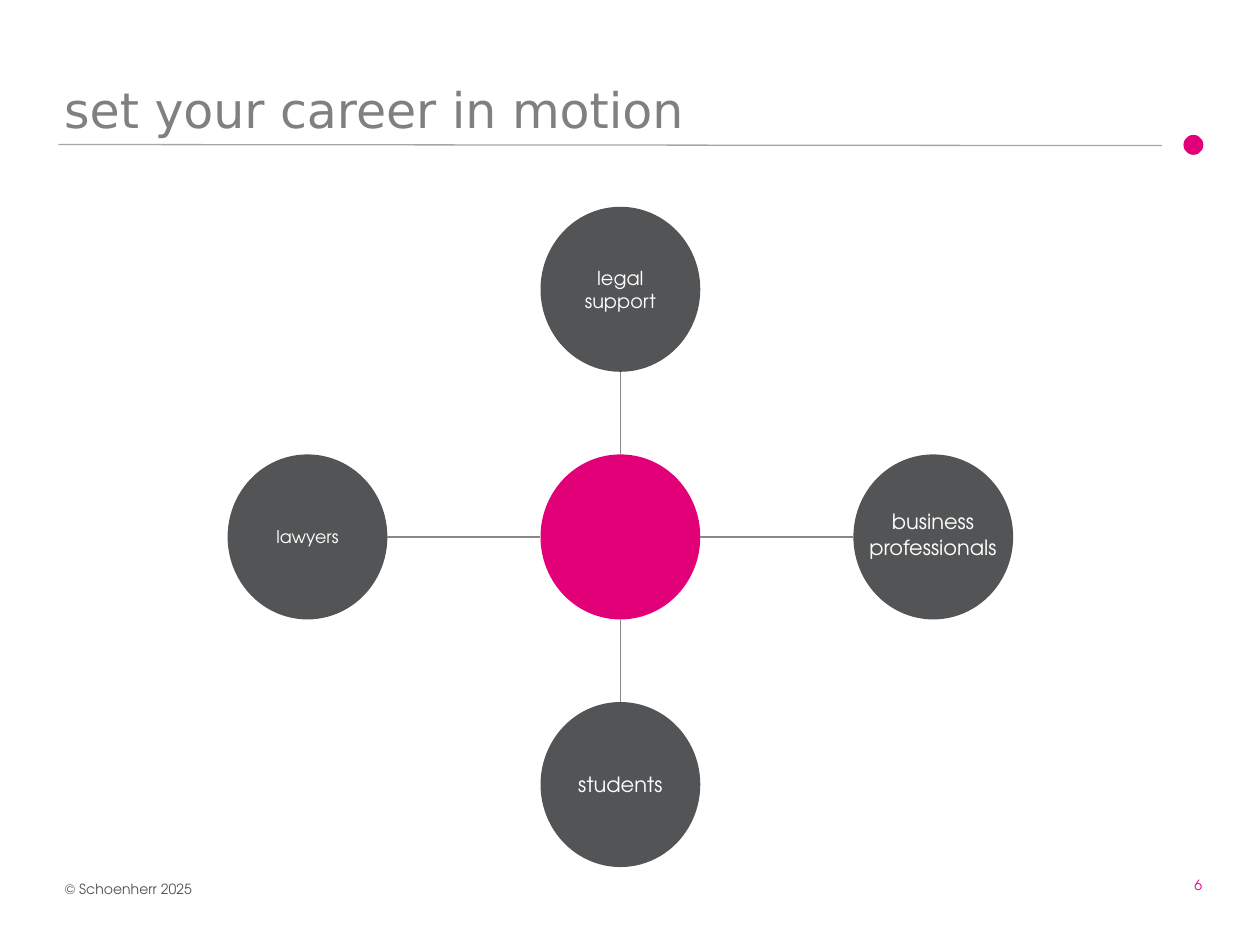
from dataclasses import dataclass

from pptx import Presentation
from pptx.dml.color import RGBColor
from pptx.enum.shapes import MSO_CONNECTOR, MSO_SHAPE
from pptx.enum.text import MSO_ANCHOR as Anchor
from pptx.enum.text import MSO_AUTO_SIZE as AutoSize
from pptx.enum.text import PP_ALIGN as Align
from pptx.oxml import parse_xml
from pptx.oxml.ns import nsdecls
from pptx.util import Pt

COLORS = {
    "accent": "E2007A",
    "hub": "E20078",
    "node": "535455",
    "title": "808080",
    "rule": "A6A6A6",
    "spoke": "878889",
    "white": "FFFFFF",
}
BODY_FONT = "TeX Gyre Adventor"
TITLE_FONT = "DejaVu Sans"

CENTER_X, CENTER_Y = 354.5, 306.8
CIRCLE_WIDTH, CIRCLE_HEIGHT = 91.3, 94.3
STEP_X, STEP_Y = 178.8, 141.5


@dataclass
class Node:
    column: int
    row: int
    text: str = ""
    size: float = 12


NODES = [
    Node(1, 0),
    Node(-1, 0, "lawyers", 10),
    Node(0, 1, "students", 12),
    Node(0, -1, "legal support", 11),
]


def color(name: str) -> RGBColor:
    return RGBColor.from_string(COLORS[name])


def format_text(frame, font: str, size: float, color_name: str, align=Align.LEFT) -> None:
    for paragraph in frame.paragraphs:
        paragraph.alignment = align
        for run in paragraph.runs:
            run.font.name = font
            run.font.size = Pt(size)
            run.font.color.rgb = color(color_name)


def add_ellipse(slide, center_x: float, center_y: float, width: float, height: float, fill: str):
    shape = slide.shapes.add_shape(
        MSO_SHAPE.OVAL, Pt(center_x - width / 2), Pt(center_y - height / 2), Pt(width), Pt(height)
    )
    shape.shadow.inherit = False
    shape.fill.solid()
    shape.fill.fore_color.rgb = color(fill)
    shape.line.fill.background()
    return shape


def add_line(slide, start_x: float, start_y: float, end_x: float, end_y: float, color_name: str) -> None:
    line = slide.shapes.add_connector(
        MSO_CONNECTOR.STRAIGHT, Pt(start_x), Pt(start_y), Pt(end_x), Pt(end_y)
    )
    line.line.color.rgb = color(color_name)
    line.line.width = Pt(0.75)
    line._element.spPr.append(parse_xml(f"<a:effectLst {nsdecls('a')}/>"))


def add_label(slide, left: float, top: float, width: float, height: float, text: str,
              size: float, color_name: str, align=Align.LEFT, wrap: bool = True) -> None:
    box = slide.shapes.add_textbox(Pt(left), Pt(top), Pt(width), Pt(height))
    frame = box.text_frame
    frame.word_wrap = wrap
    frame.auto_size = AutoSize.SHAPE_TO_FIT_TEXT
    frame.text = text
    format_text(frame, BODY_FONT, size, color_name, align)


def add_title(slide, text: str) -> None:
    title = slide.shapes.title
    title.left, title.top, title.width, title.height = Pt(29.5), Pt(43.2), Pt(638), Pt(39.6)
    frame = title.text_frame
    frame.word_wrap = True
    frame.auto_size = AutoSize.NONE
    frame.vertical_anchor = Anchor.BOTTOM
    frame.text = text
    format_text(frame, TITLE_FONT, 28, "title")


def add_node(slide, node: Node) -> None:
    shape = add_ellipse(slide, CENTER_X + node.column * STEP_X, CENTER_Y + node.row * STEP_Y,
                        CIRCLE_WIDTH, CIRCLE_HEIGHT, "node")
    if node.text:
        frame = shape.text_frame
        frame.word_wrap = True
        frame.vertical_anchor = Anchor.MIDDLE
        frame.text = node.text
        format_text(frame, BODY_FONT, node.size, "white", Align.CENTER)


def add_spoke(slide, node: Node) -> None:
    add_line(
        slide,
        CENTER_X + node.column * CIRCLE_WIDTH / 2,
        CENTER_Y + node.row * CIRCLE_HEIGHT / 2,
        CENTER_X + node.column * (STEP_X - CIRCLE_WIDTH / 2),
        CENTER_Y + node.row * (STEP_Y - CIRCLE_HEIGHT / 2),
        "spoke",
    )


def main() -> None:
    presentation = Presentation()
    presentation.slide_width, presentation.slide_height = Pt(720), Pt(540)
    slide = presentation.slides.add_slide(presentation.slide_layouts[5])

    add_label(slide, 675.4, 497.5, 24.5, 17.3, "6", 8, "accent", wrap=False)
    add_line(slide, 33.4, 82.6, 664, 83.2, "rule")
    add_ellipse(slide, 682, 82.8, 11.4, 11.4, "accent")
    add_label(slide, 30, 499.5, 158.4, 17.3, "© Schoenherr 2025", 8, "node")
    add_title(slide, "set your career in motion")

    add_ellipse(slide, CENTER_X, CENTER_Y, CIRCLE_WIDTH, CIRCLE_HEIGHT, "hub")
    for node in NODES:
        add_node(slide, node)
    for node in NODES:
        add_spoke(slide, node)
    add_label(slide, 468, 287.3, 130.3, 36, "business\nprofessionals", 12, "white", Align.CENTER)

    presentation.save("out.pptx")


if __name__ == "__main__":
    main()
